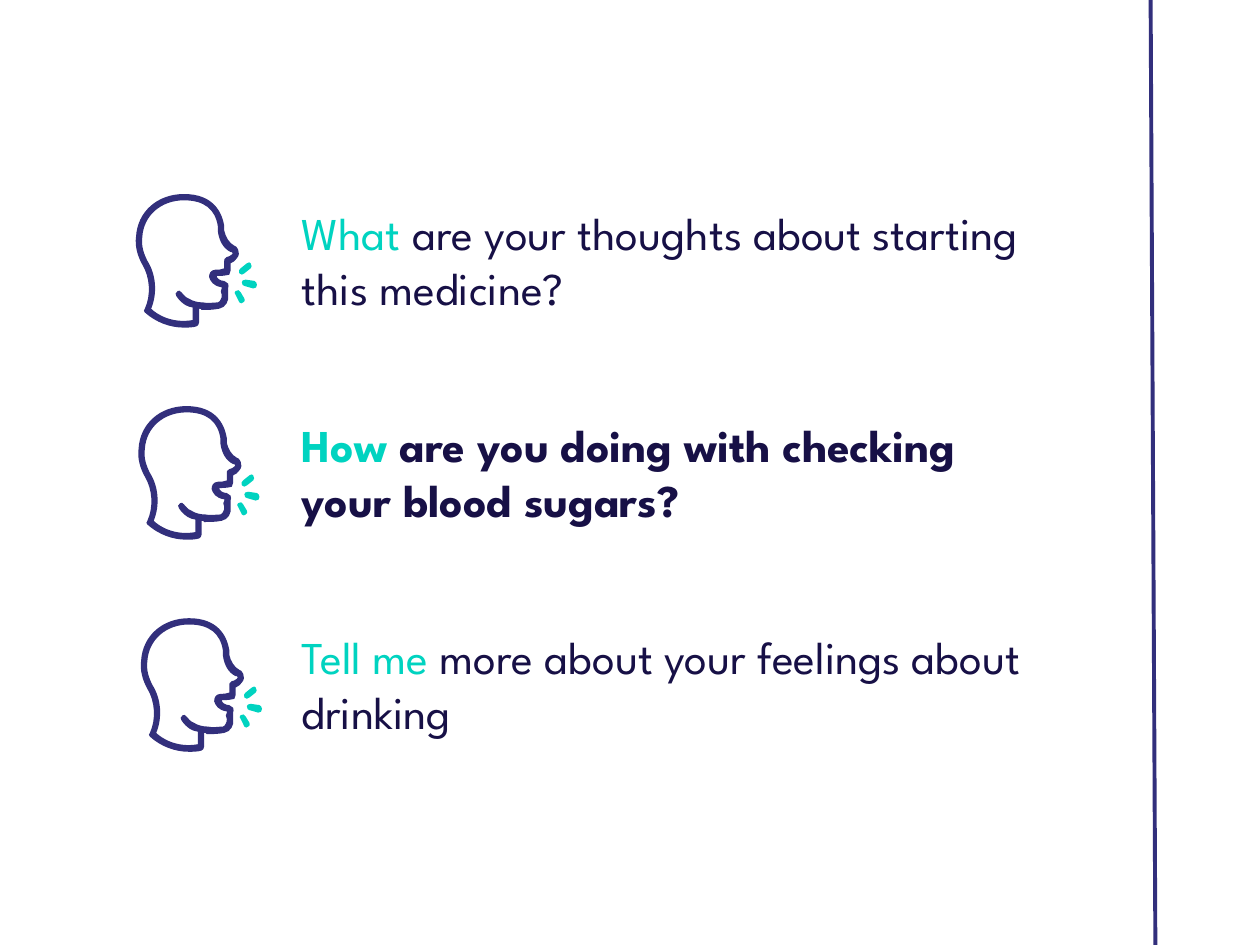
from lxml import etree
from pptx import Presentation, util as u
from pptx.dml import color
from pptx.enum import shapes, text
from pptx.oxml import ns

NAVY, TEAL, INK = "322F7C", "00D3C0", "171046"
UNIT = 0.72
ROW_TOP, ROW_GAP = 113.76, 121.2
ICON_LEFT, ICON_TOP, ICON_SHIFT = 72, 108, 1.44
TEXT_LEFT, TEXT_HEIGHT = 165.3, 70.56

QUESTIONS = [
    ("What", " are your thoughts about starting this medicine?", 424.8, False),
    ("How", " are you doing with checking your blood sugars?", 411.12, True),
    ("Tell me ", "more about your feelings about drinking", 430.56, False),
]

HEAD_OUTSIDE = [
    (89, 48), (88, 46, 87, 45, 86, 45), (82, 43, 79, 38, 78, 33),
    (78, 32, 78, 31, 78, 29), (76, 18, 69, 4, 46, 4), (25, 4, 9, 18, 8, 38),
    (7, 45, 9, 53, 13, 60), (19, 70, 20, 84, 15, 95), (14, 96, 14, 97, 15, 98),
    (24, 106, 35, 110, 46, 110), (49, 110, 53, 110, 56, 109),
    (57, 109, 58, 107, 58, 106), (58, 95), (59, 95, 60, 95, 60, 96),
    (65, 96, 69, 96, 74, 95), (79, 94, 82, 89, 81, 84), (81, 83, 81, 83, 81, 83),
    (81, 82, 81, 81, 81, 80), (81, 79), (82, 78, 81, 76, 81, 75),
    (80, 74, 79, 74, 78, 73), (75, 73, 72, 71, 72, 69), (75, 69, 78, 69, 82, 68),
    (83, 67, 83, 66, 83, 65), (83, 59), (85, 58, 87, 57, 88, 55),
    (90, 53, 90, 50, 89, 48),
]
HEAD_INSIDE = [
    (84, 52), (83, 53, 81, 54, 80, 54), (78, 55, 78, 56, 78, 57), (78, 63),
    (76, 64, 73, 64, 71, 64), (69, 64, 68, 65, 67, 66), (66, 67, 66, 69, 66, 70),
    (67, 73, 69, 77, 76, 78), (76, 79), (75, 80, 75, 82, 76, 84),
    (76, 84, 76, 84, 76, 84), (76, 85, 76, 87, 75, 88), (75, 89, 74, 89, 73, 90),
    (69, 90, 65, 91, 61, 90), (57, 90, 53, 89, 50, 87), (47, 86, 46, 84, 44, 82),
    (43, 81, 42, 80, 41, 81), (39, 82, 39, 84, 40, 85), (42, 88, 44, 90, 47, 92),
    (49, 93, 51, 94, 53, 94), (53, 104), (36, 107, 24, 99, 20, 95),
    (25, 83, 24, 68, 17, 57), (14, 51, 12, 45, 13, 38), (14, 21, 28, 9, 46, 9),
    (46, 9), (62, 9, 71, 16, 73, 30), (73, 31, 73, 33, 73, 34),
    (74, 41, 77, 47, 83, 50), (84, 50, 84, 50, 84, 50), (85, 51, 85, 51, 84, 52),
]
MIDDLE_RAY = [
    (101, 79), (103, 79, 104, 78, 104, 76), (104, 75, 103, 73, 102, 73), (95, 72),
    (93, 72, 92, 73, 92, 74), (92, 76, 93, 77, 94, 77), (101, 79),
]
LOWER_RAY = [
    (90, 90), (91, 91, 92, 91, 93, 90), (94, 90, 95, 88, 94, 87), (91, 82),
    (90, 80, 89, 80, 87, 81), (86, 82, 86, 83, 87, 84), (90, 90),
]
UPPER_RAY = [
    (92, 68), (93, 68, 93, 68, 94, 67), (99, 63), (100, 62, 100, 61, 99, 59),
    (99, 58, 97, 58, 96, 59), (91, 63), (90, 64, 89, 65, 90, 67),
    (91, 67, 91, 68, 92, 68),
]
ICON_PARTS = [
    ((90, 70, 16, 10), [MIDDLE_RAY], TEAL),
    ((84, 78, 11, 14), [LOWER_RAY], TEAL),
    ((88, 57, 13, 13), [UPPER_RAY], TEAL),
    ((6, 2, 85, 109), [HEAD_OUTSIDE, HEAD_INSIDE], NAVY),
]


def rgb(value):
    """Turn a hex string into a colour."""
    return color.RGBColor.from_string(value)


def set_attributes(target, values):
    """Set each named attribute on the target."""
    for name, value in values.items():
        setattr(target, name, value)


def add_command(track, command, numbers, left, top):
    """Add one drawing command with its points to a path element."""
    element = etree.SubElement(track, ns.qn(f"a:{command}"))
    for x, y in zip(numbers[::2], numbers[1::2]):
        etree.SubElement(element, ns.qn("a:pt"), x=str(x - left), y=str(y - top))


def draw_curves(shape, contours, left, top):
    """Give a freeform closed contours of lines and cubic curves."""
    track = shape._element.spPr.find(f".//{ns.qn('a:path')}")
    for child in list(track):
        track.remove(child)
    for start, *segments in contours:
        add_command(track, "moveTo", start, left, top)
        for numbers in segments:
            command = "lnTo" if len(numbers) == 2 else "cubicBezTo"
            add_command(track, command, numbers, left, top)
        etree.SubElement(track, ns.qn("a:close"))


def add_outline(page, frame, contours, fill, icon_left, icon_top):
    """Add a filled curved shape that lies in a frame of the icon."""
    left, top, width, height = frame
    builder = page.shapes.build_freeform(0, 0, scale=u.Pt(UNIT))
    builder.add_line_segments([(width, 0), (width, height), (0, height)])
    shape = builder.convert_to_shape(
        u.Pt(icon_left + left * UNIT), u.Pt(icon_top + top * UNIT))
    draw_curves(shape, contours, left, top)
    shape.shadow.inherit = False
    shape.fill.solid()
    shape.fill.fore_color.rgb = rgb(fill)
    shape.line.fill.background()


def add_speaker(page, left, top):
    """Add a speaking head with its three rays."""
    for frame, contours, fill in ICON_PARTS:
        add_outline(page, frame, contours, fill, left, top)


def add_question(page, top, opening, rest, width, bold):
    """Add a question whose opening words stand out."""
    box = page.shapes.add_textbox(
        u.Pt(TEXT_LEFT), u.Pt(top), u.Pt(width), u.Pt(TEXT_HEIGHT))
    set_attributes(box.text_frame, {
        "word_wrap": True, "auto_size": text.MSO_AUTO_SIZE.SHAPE_TO_FIT_TEXT})
    para = box.text_frame.paragraphs[0]
    for words, shade in ((opening, TEAL), (rest, INK)):
        span = para.add_run()
        span.text = words
        set_attributes(span.font, {
            "name": "League Spartan", "size": u.Pt(26), "bold": bold})
        span.font.color.rgb = rgb(shade)


def add_rule(page, start, end):
    """Add a plain line between two points."""
    rule = page.shapes.add_connector(
        shapes.MSO_CONNECTOR.STRAIGHT, *[u.Pt(value) for value in start + end])
    rule.line.width = u.Pt(2.25)
    rule.line.color.rgb = rgb(NAVY)
    etree.SubElement(rule._element.spPr, ns.qn("a:effectLst"))


def main():
    """Build and save the slide."""
    deck = Presentation()
    set_attributes(deck, {"slide_width": u.Pt(720), "slide_height": u.Pt(540)})
    page = deck.slides.add_slide(deck.slide_layouts[6])
    add_rule(page, (657.5, 0), (660.24, 540))
    for row, question in enumerate(QUESTIONS):
        add_question(page, ROW_TOP + row * ROW_GAP, *question)
    for row in (1, 0, 2):
        add_speaker(page, ICON_LEFT + row * ICON_SHIFT, ICON_TOP + row * ROW_GAP)
    deck.save("out.pptx")


if __name__ == "__main__":
    main()
